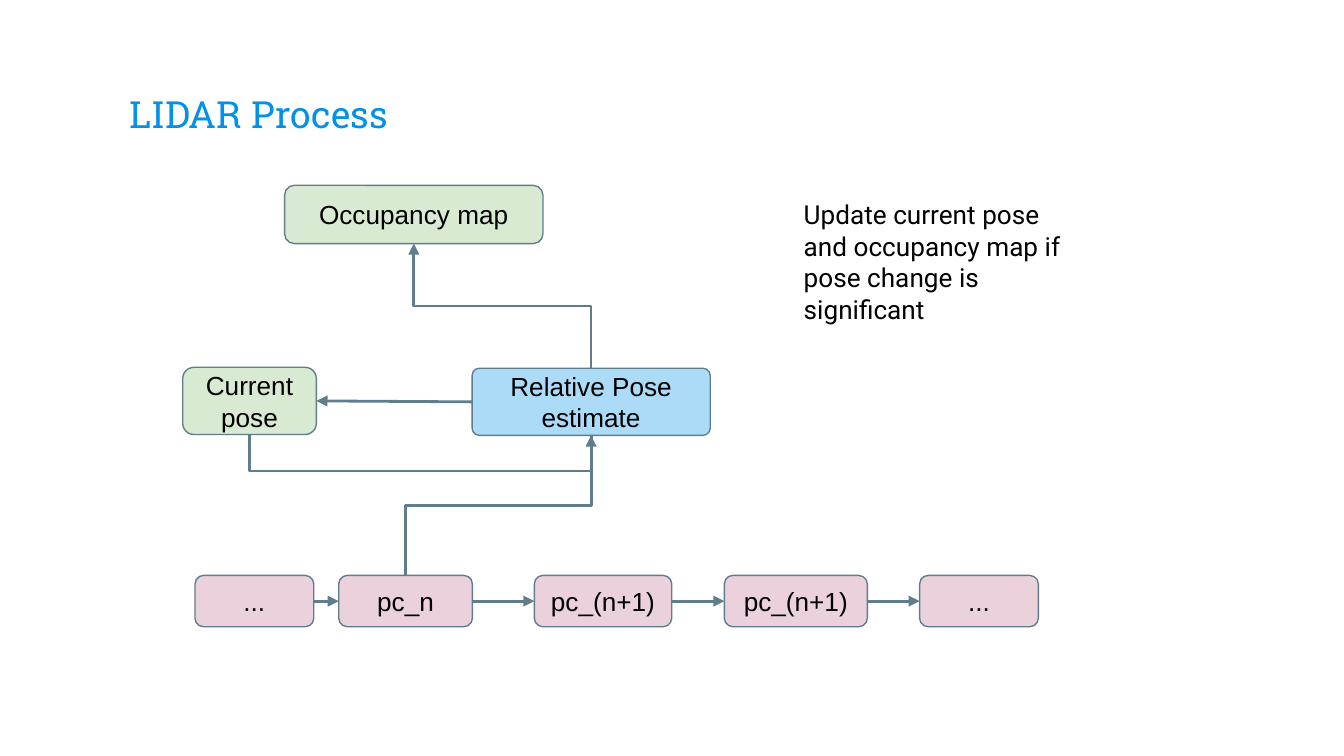
import pptx
import pptx.dml.color
import pptx.enum.shapes
import pptx.enum.text
import pptx.oxml
import pptx.oxml.ns
import pptx.util
from lxml import etree

Pt = pptx.util.Pt
RGB = pptx.dml.color.RGBColor
ALIGN = pptx.enum.text.PP_ALIGN
ANCHOR = pptx.enum.text.MSO_ANCHOR
CONNECTOR = pptx.enum.shapes.MSO_CONNECTOR
qn = pptx.oxml.ns.qn

BLACK = RGB(0x00, 0x00, 0x00)
TITLE_BLUE = RGB(0x00, 0x91, 0xEA)
SLATE = RGB(0x60, 0x7D, 0x8B)
GREEN = RGB(0xD9, 0xEA, 0xD3)
BLUE = RGB(0xAC, 0xDB, 0xF8)
PINK = RGB(0xEA, 0xD1, 0xDC)
TOP, LEFT, BOTTOM, RIGHT = range(4)


def write_text(sp, text, font, size, color, align, anchor):
    """Fill a shape with one paragraph per line of text."""
    tf = sp.text_frame
    tf.word_wrap = True
    tf.auto_size = pptx.enum.text.MSO_AUTO_SIZE.NONE
    tf.vertical_anchor = anchor
    tf.margin_left = tf.margin_right = tf.margin_top = tf.margin_bottom = Pt(7.2)
    tf.text = text
    for p in tf.paragraphs:
        p.alignment = align
        p.font.name = font
        p.font.size = Pt(size)
        p.font.color.rgb = color


def add_node(s, text, fill, x, y, w, h, corner=0.167):
    """Add a rounded, labelled node."""
    sp = s.shapes.add_shape(pptx.enum.shapes.MSO_SHAPE.ROUNDED_RECTANGLE,
                            Pt(x), Pt(y), Pt(w), Pt(h))
    sp.adjustments[0] = corner
    sp.shadow.inherit = False
    sp.fill.solid()
    sp.fill.fore_color.rgb = fill
    sp.line.color.rgb = SLATE
    sp.line.width = Pt(0.75)
    write_text(sp, text, "Arial", 14, BLACK, ALIGN.CENTER, ANCHOR.MIDDLE)
    return sp


def add_link(s, kind, start, start_side, end, end_side, head=True):
    """Join two nodes with a connector, with an arrowhead if asked."""
    link = s.shapes.add_connector(kind, 0, 0, 0, 0)
    link.begin_connect(start, start_side)
    link.end_connect(end, end_side)
    link.line.color.rgb = SLATE
    link.line.width = Pt(1.5)
    if head:
        etree.SubElement(link.line._get_or_add_ln(), qn("a:tailEnd"), type="triangle")
    etree.SubElement(link._element.spPr, qn("a:effectLst"))
    return link


def add_elbow(s, start, start_side, end, end_side, drop=None, head=True):
    """Join two nodes by a vertical-horizontal-vertical elbow, bending at drop or halfway."""
    link = add_link(s, CONNECTOR.ELBOW, start, start_side, end, end_side, head)
    dx, dy = link.end_x - link.begin_x, link.end_y - link.begin_y
    mid_x, mid_y = (link.begin_x + link.end_x) // 2, (link.begin_y + link.end_y) // 2
    link.width, link.height = abs(dy), abs(dx)
    link.left, link.top = mid_x - abs(dy) // 2, mid_y - abs(dx) // 2
    xfrm = link._element.spPr.find(qn("a:xfrm"))
    for name in ("flipH", "flipV"):
        xfrm.attrib.pop(name, None)
    xfrm.set("rot", str((270 if dx > 0 else 90) * 60000))
    if (dx > 0) == (dy > 0):
        xfrm.set("flipH", "1")
    bend = Pt(drop) / dy if drop else 0.5
    guides = link._element.spPr.find(qn("a:prstGeom")).get_or_add_avLst()
    etree.SubElement(guides, qn("a:gd"), name="adj1", fmla=f"val {round(bend * 100000)}")


def add_title(s, x, y, w, h):
    """Place the slide title in its box."""
    sp = s.shapes.title
    sp.left, sp.top, sp.width, sp.height = Pt(x), Pt(y), Pt(w), Pt(h)
    write_text(sp, "LIDAR Process", "Roboto Slab", 20, TITLE_BLUE, ALIGN.LEFT, ANCHOR.BOTTOM)


def add_scans(s, x, y, h):
    """Add the chain of point clouds and return its nodes."""
    scans = [("...", 0, 63.6), ("pc_n", 77, 71.6), ("pc_(n+1)", 181.8, 73.6),
             ("pc_(n+1)", 283.6, 76.6), ("...", 388.2, 63.6)]
    nodes = [add_node(s, text, PINK, x + dx, y, w, h) for text, dx, w in scans]
    for start, end in zip(nodes, nodes[1:]):
        add_link(s, CONNECTOR.STRAIGHT, start, RIGHT, end, LEFT)
    return nodes


def add_process(s, x, y):
    """Add the pose and map nodes above the scan chain and link them."""
    occupancy = add_node(s, "Occupancy map", GREEN, x + 54.6, y, 138.4, 31.2)
    current = add_node(s, "Current\npose", GREEN, x, y + 97.5, 71.6, 36)
    estimate = add_node(s, "Relative Pose estimate", BLUE, x + 155, y + 98, 127.6, 36, 0.109)
    scans = add_scans(s, x + 6.6, y + 209, 27.5)
    add_link(s, CONNECTOR.STRAIGHT, estimate, LEFT, current, RIGHT)
    add_elbow(s, current, BOTTOM, estimate, BOTTOM, drop=19.2)
    add_elbow(s, scans[1], TOP, estimate, BOTTOM, head=False)
    add_elbow(s, estimate, TOP, occupancy, BOTTOM)


def add_note(s, x, y, w, h):
    """Add the remark beside the diagram."""
    sp = s.shapes.add_textbox(Pt(x), Pt(y), Pt(w), Pt(h))
    write_text(sp, "Update current pose and occupancy map if pose change is significant",
               "Roboto", 14, BLACK, ALIGN.LEFT, ANCHOR.TOP)


def main():
    """Build the slide and save it."""
    prs = pptx.Presentation()
    prs.slide_width, prs.slide_height = Pt(720), Pt(405)
    s = prs.slides.add_slide(prs.slide_layouts[5])
    add_title(s, 62, 24.5, 596, 55.5)
    add_process(s, 97.9, 99.3)
    add_note(s, 423.5, 99.3, 163.5, 70)
    prs.save("out.pptx")


if __name__ == "__main__":
    main()
